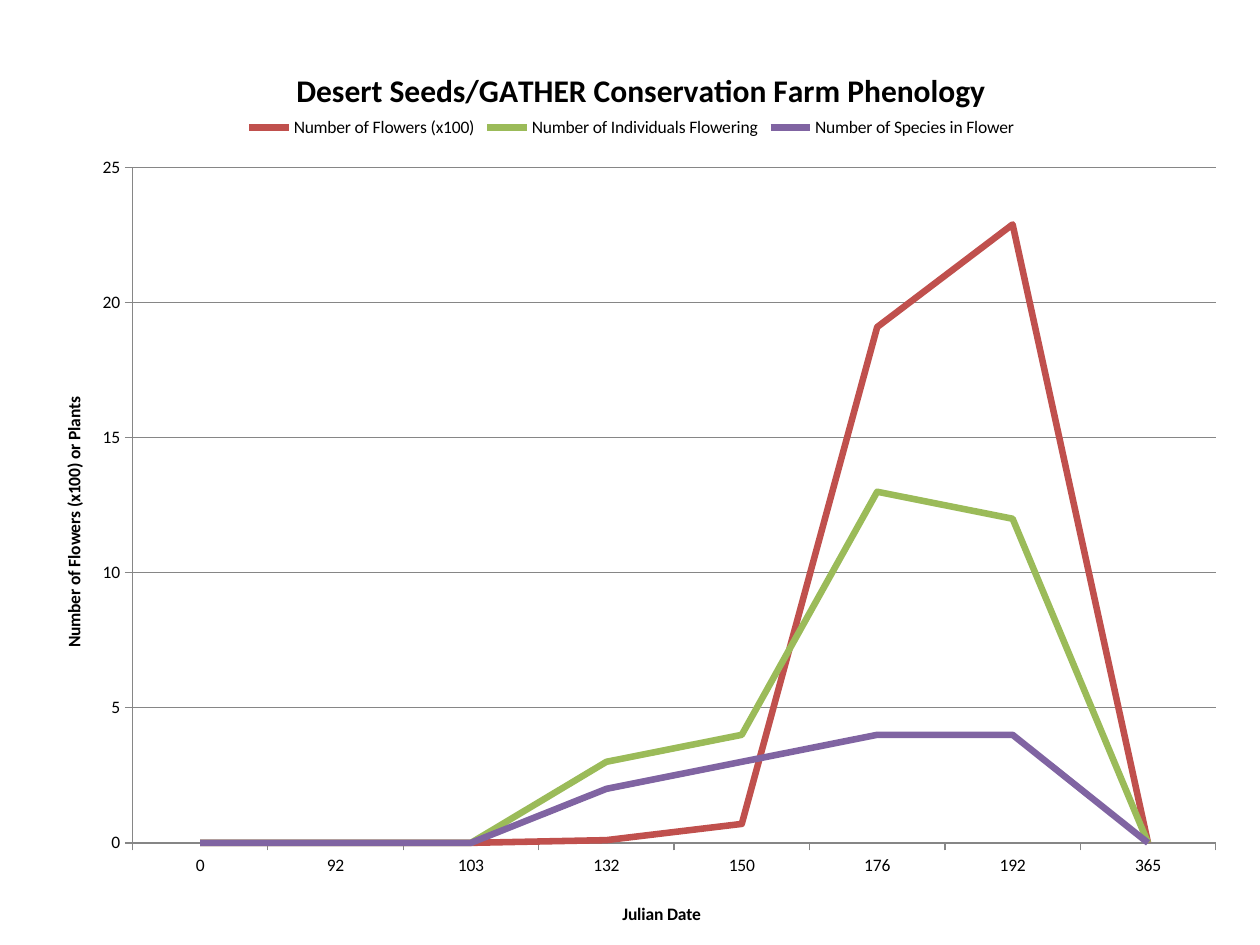
from dataclasses import dataclass
from typing import Optional

import pptx
import pptx.chart.data
import pptx.dml.color
import pptx.enum.chart
import pptx.oxml
import pptx.oxml.ns
import pptx.util
from pptx.util import Cm, Pt


@dataclass(frozen=True)
class Theme:
    font: str = "Calibri"
    text: str = "000000"
    rule: str = "868686"
    body_size: int = 10
    title_size: int = 18
    rule_width: float = 0.75
    curve_width: float = 3.75


@dataclass(frozen=True)
class Curve:
    name: str
    values: tuple
    color: str


@dataclass(frozen=True)
class Place:
    """Position and size as fractions of the chart."""
    x: float
    y: float
    w: Optional[float] = None
    h: Optional[float] = None


THEME = Theme()
DATES = ("0", "92", "103", "132", "150", "176", "192", "365")
CURVES = (
    Curve("Number of Flowers (x100)", (0, 0, 0, 0.1, 0.7, 19.1, 22.9, 0), "C0504D"),
    Curve("Number of Individuals Flowering", (0, 0, 0, 3, 4, 13, 12, 0), "9BBB59"),
    Curve("Number of Species in Flower", (0, 0, 0, 2, 3, 4, 4, 0), "8064A2"),
)


def rgb(color: str) -> pptx.dml.color.RGBColor:
    return pptx.dml.color.RGBColor.from_string(color)


def style_font(font, size: int, bold: bool = False) -> None:
    font.name, font.size, font.bold = THEME.font, Pt(size), bold
    font.color.rgb = rgb(THEME.text)


def style_line(line, color: str, width: float) -> None:
    line.color.rgb = rgb(color)
    line.width = Pt(width)


def set_layout(parent, index: int, place: Place, inner: bool = False) -> None:
    """Give a chart part a manual layout as its child number index."""
    for old in parent.findall(pptx.oxml.ns.qn("c:layout")):
        parent.remove(old)
    settings = [("layoutTarget", "inner")] if inner else []
    settings += [("xMode", "edge"), ("yMode", "edge")]
    settings += [(key, getattr(place, key)) for key in "xywh"
                 if getattr(place, key) is not None]
    children = "".join(f'<c:{tag} val="{value}"/>' for tag, value in settings)
    parent.insert(index, pptx.oxml.parse_xml(
        f'<c:layout {pptx.oxml.ns.nsdecls("c")}>'
        f"<c:manualLayout>{children}</c:manualLayout></c:layout>"))


def add_title(owner, text: str, size: int, place: Place) -> None:
    """Title a chart or an axis."""
    owner.has_title = True
    title = owner.chart_title if hasattr(owner, "chart_title") else owner.axis_title
    run = title.text_frame.paragraphs[0].add_run()
    run.text = text
    style_font(run.font, size, bold=True)
    set_layout(title._element, 1, place)


def style_axis(axis, title: str, place: Place) -> None:
    axis.major_tick_mark = pptx.enum.chart.XL_TICK_MARK.OUTSIDE
    axis.minor_tick_mark = pptx.enum.chart.XL_TICK_MARK.NONE
    style_font(axis.tick_labels.font, THEME.body_size)
    style_line(axis.format.line, THEME.rule, THEME.rule_width)
    add_title(axis, title, THEME.body_size, place)


def add_phenology_chart(slide) -> None:
    data = pptx.chart.data.CategoryChartData()
    data.categories = DATES
    for curve in CURVES:
        data.add_series(curve.name, curve.values)
    chart = slide.shapes.add_chart(
        pptx.enum.chart.XL_CHART_TYPE.LINE,
        Cm(0.46), Cm(0.53), Cm(24.54), Cm(18.52), data).chart
    style_font(chart.font, THEME.body_size)
    add_title(chart, "Desert Seeds/GATHER Conservation Farm Phenology",
              THEME.title_size, Place(0.22, 0.04))

    # Legend
    chart.has_legend = True
    chart.legend.position = pptx.enum.chart.XL_LEGEND_POSITION.TOP
    chart.legend.include_in_layout = False
    style_font(chart.legend.font, THEME.body_size)
    set_layout(chart.legend._element, 1, Place(0.18, 0.09, 0.64, 0.04))

    # Axes and gridlines
    style_axis(chart.category_axis, "Julian Date", Place(0.49, 0.95))
    counts = chart.value_axis
    style_axis(counts, "Number of Flowers (x100) or Plants", Place(0.03, 0.4))
    counts.minimum_scale, counts.maximum_scale, counts.major_unit = 0, 25, 5
    counts.has_major_gridlines = True
    style_line(counts.major_gridlines.format.line, THEME.rule, THEME.rule_width)

    # Curves
    plot = chart.plots[0]
    plot.vary_by_categories = False
    for series, curve in zip(plot.series, CURVES):
        series.smooth = False
        series.marker.style = pptx.enum.chart.XL_MARKER_STYLE.NONE
        style_line(series.format.line, curve.color, THEME.curve_width)
    plot_area = chart._chartSpace.chart.plotArea
    set_layout(plot_area, 0, Place(0.09, 0.154, 0.89, 0.735), inner=True)


def main() -> None:
    deck = pptx.Presentation()
    deck.slide_width, deck.slide_height = Cm(25.4), Cm(19.05)
    slide = deck.slides.add_slide(deck.slide_layouts[6])
    add_phenology_chart(slide)
    deck.save("out.pptx")


if __name__ == "__main__":
    main()
